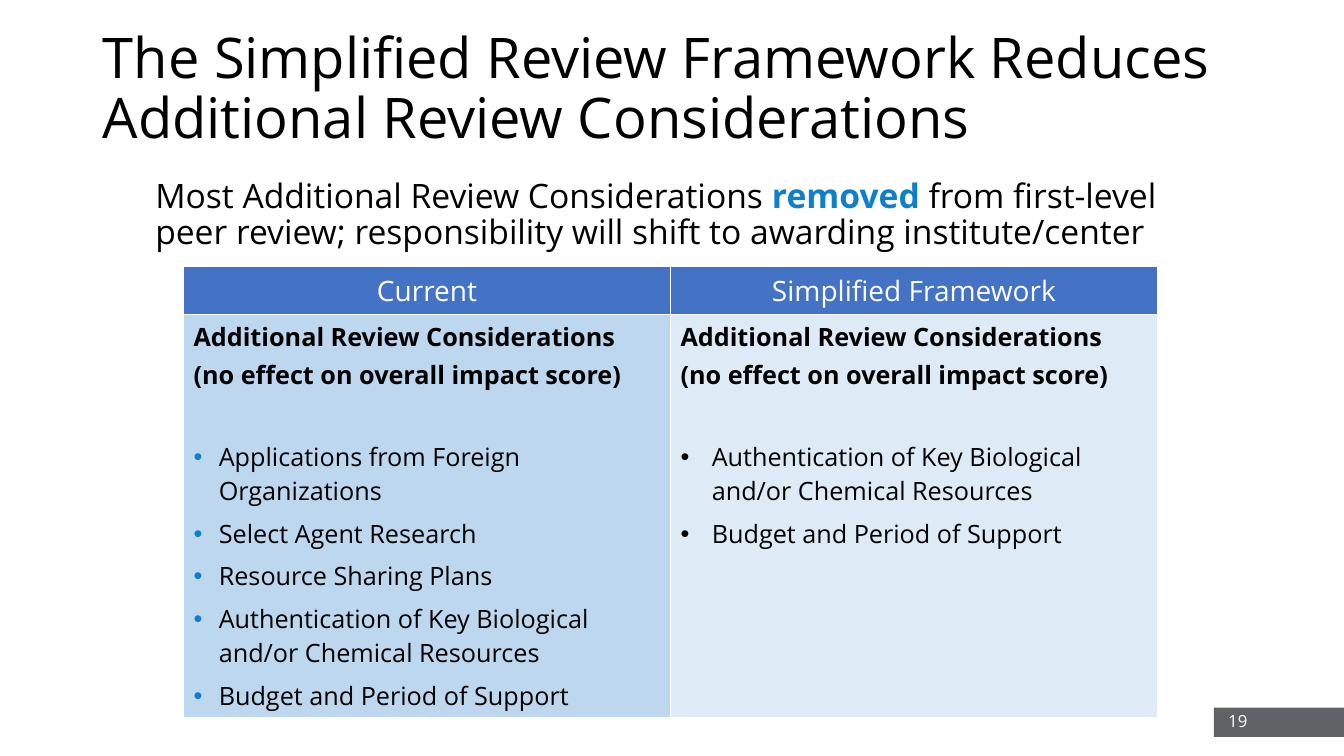
import pptx
import pptx.util
import pptx.dml.color
import pptx.enum.shapes
import pptx.enum.text
import pptx.oxml
import pptx.oxml.ns

Inches = pptx.util.Inches
Pt = pptx.util.Pt
RGBColor = pptx.dml.color.RGBColor
PP_ALIGN = pptx.enum.text.PP_ALIGN
MSO_ANCHOR = pptx.enum.text.MSO_ANCHOR

BLACK = RGBColor(0x00, 0x00, 0x00)
WHITE = RGBColor(0xFF, 0xFF, 0xFF)
ACCENT = RGBColor(0x0F, 0x7F, 0xC9)
HEADER_BLUE = RGBColor(0x44, 0x72, 0xC4)
CURRENT_BLUE = RGBColor(0xBD, 0xD7, 0xEE)
SIMPLIFIED_BLUE = RGBColor(0xDE, 0xEB, 0xF7)
FOOTER_GRAY = RGBColor(0x61, 0x62, 0x65)
NAMESPACE = pptx.oxml.ns.nsdecls("a")


def set_font(font, size, color, bold=False):
    font.name = "Open Sans"
    font.size = Pt(size)
    font.bold = bold
    font.color.rgb = color


def set_bullet(paragraph, indent, color):
    properties = paragraph._p.get_or_add_pPr()
    properties.set("marL", str(Inches(indent)))
    properties.set("indent", str(-Inches(indent)))
    for element in (
        f'<a:buClr {NAMESPACE}><a:srgbClr val="{color}"/></a:buClr>',
        f'<a:buFont {NAMESPACE} typeface="Arial"/>',
        f'<a:buChar {NAMESPACE} char="•"/>',
    ):
        properties.append(pptx.oxml.parse_xml(element))


presentation = pptx.Presentation()
presentation.slide_width = Inches(13.33)
presentation.slide_height = Inches(7.5)
slide = presentation.slides.add_slide(presentation.slide_layouts[1])

footer = slide.shapes.add_shape(
    pptx.enum.shapes.MSO_SHAPE.RECTANGLE, Inches(12.04), Inches(7.02), Inches(1.29), Inches(0.29))
footer.shadow.inherit = False
footer.fill.solid()
footer.fill.fore_color.rgb = FOOTER_GRAY
footer.line.fill.background()

title = slide.shapes.title
title.left, title.top, title.width, title.height = map(Inches, (0.92, 0.17, 11.63, 1.45))
title.text_frame.auto_size = pptx.enum.text.MSO_AUTO_SIZE.NONE
title.text_frame.vertical_anchor = MSO_ANCHOR.MIDDLE
title.text_frame.text = "The Simplified Review Framework Reduces Additional Review Considerations"
paragraph = title.text_frame.paragraphs[0]
paragraph.alignment = PP_ALIGN.LEFT
paragraph.line_spacing = 0.9
set_font(paragraph.font, 40, BLACK)

body = slide.placeholders[1]
body.left, body.top, body.width, body.height = map(Inches, (1.44, 1.73, 10.75, 0.98))
body.text_frame.auto_size = pptx.enum.text.MSO_AUTO_SIZE.NONE
paragraph = body.text_frame.paragraphs[0]
properties = paragraph._p.get_or_add_pPr()
properties.set("marL", "0")
properties.set("indent", "0")
properties.append(pptx.oxml.parse_xml(f"<a:buNone {NAMESPACE}/>"))
paragraph.line_spacing = 0.9
paragraph.space_before = Pt(0)
for text, color, bold in (
    ("Most Additional Review Considerations ", BLACK, False),
    ("removed", ACCENT, True),
    (" from first-level peer review; responsibility will shift to awarding institute/center", BLACK, False),
):
    run = paragraph.add_run()
    run.text = text
    set_font(run.font, 24, color, bold)

headings = ["Additional Review Considerations", "(no effect on overall impact score)"]
kept = ["Authentication of Key Biological and/or Chemical Resources", "Budget and Period of Support"]
removed = ["Applications from Foreign Organizations", "Select Agent Research", "Resource Sharing Plans"]
columns = [
    ("Current", removed + kept, CURRENT_BLUE, 0.25, ACCENT),
    ("Simplified Framework", kept, SIMPLIFIED_BLUE, 0.31, BLACK),
]

table = slide.shapes.add_table(2, 2, Inches(1.82), Inches(2.64), Inches(9.66), Inches(4.47)).table
table.rows[0].height = Inches(0.48)
table.rows[1].height = Inches(3.99)

for column, (header, items, fill, indent, bullet_color) in enumerate(columns):
    table.columns[column].width = Inches(4.83)
    for row, color in enumerate((HEADER_BLUE, fill)):
        cell = table.cell(row, column)
        cell_properties = cell._tc.get_or_add_tcPr()
        for side in ("lnL", "lnR", "lnT", "lnB"):
            cell_properties.append(pptx.oxml.parse_xml(
                f'<a:{side} {NAMESPACE} w="{Pt(1)}"><a:solidFill>'
                f'<a:srgbClr val="{WHITE}"/></a:solidFill></a:{side}>'))
        cell.fill.solid()
        cell.fill.fore_color.rgb = color

    header_cell = table.cell(0, column)
    header_cell.text = header
    paragraph = header_cell.text_frame.paragraphs[0]
    paragraph.alignment = PP_ALIGN.CENTER
    set_font(paragraph.font, 20, WHITE)

    list_cell = table.cell(1, column)
    list_cell.text = "\n".join(headings + items)
    for index, paragraph in enumerate(list_cell.text_frame.paragraphs):
        is_heading = index < len(headings)
        if not is_heading:
            set_bullet(paragraph, indent, bullet_color)
        paragraph.space_before = Pt((0, 3, 33.5)[index] if index < 3 else 6)
        set_font(paragraph.font, 18, BLACK, is_heading)

number = slide.shapes.add_textbox(Inches(9.47), Inches(6.95), Inches(3), Inches(0.4))
number.text_frame.word_wrap = True
number.text_frame.vertical_anchor = MSO_ANCHOR.MIDDLE
number.text_frame.text = "19"
paragraph = number.text_frame.paragraphs[0]
paragraph.alignment = PP_ALIGN.RIGHT
set_font(paragraph.font, 12, WHITE)

presentation.save("out.pptx")
